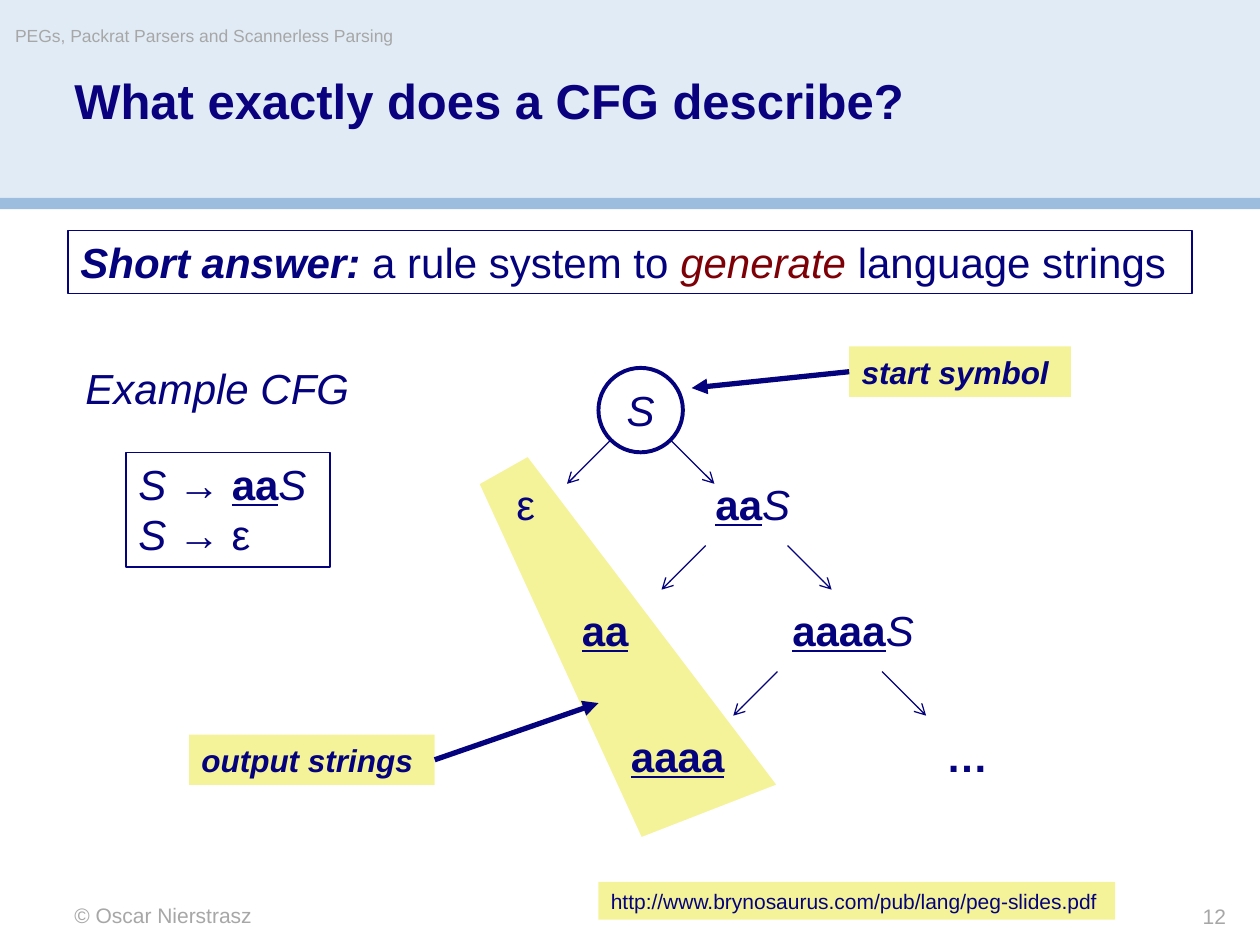
from typing import NamedTuple

import pptx
import pptx.dml.color
import pptx.enum.shapes
import pptx.enum.text
import pptx.oxml
import pptx.oxml.ns
import pptx.util

Inches, Pt = pptx.util.Inches, pptx.util.Pt
Shape = pptx.enum.shapes.MSO_SHAPE
Anchor = pptx.enum.text.MSO_ANCHOR
Align = pptx.enum.text.PP_ALIGN

NAVY, RED, GREY, YELLOW = "05027D", "7E0007", "A7A7A7", "F5F399"


class Run(NamedTuple):
    text: str
    style: str = ""  # any of b, i, u
    ink: str = ""


class Box(NamedTuple):
    """Rectangle of text; each line is a list of runs."""
    at: tuple[float, float, float, float]
    lines: list[list[Run]]
    size: float = 24
    ink: str = NAVY
    fill: str = ""
    edge: str = ""
    inset: bool = True
    align: Align = Align.LEFT


class Arrow(NamedTuple):
    start: tuple[float, float]
    end: tuple[float, float]
    width: float = 0.75
    head: str = "arrow"


def color(code: str) -> pptx.dml.color.RGBColor:
    return pptx.dml.color.RGBColor.from_string(code)


def paint(shape, fill: str = "", edge: str = "", width: float = 0.75) -> None:
    shape.shadow.inherit = False
    if fill:
        shape.fill.solid()
        shape.fill.fore_color.rgb = color(fill)
    else:
        shape.fill.background()
    if edge:
        shape.line.color.rgb = color(edge)
        shape.line.width = Pt(width)
    else:
        shape.line.fill.background()


def write(frame, lines: list[list[Run]], size: float, ink: str, align: Align) -> None:
    for n, runs in enumerate(lines):
        par = frame.paragraphs[0] if n == 0 else frame.add_paragraph()
        par.alignment = align
        font = par.font
        font.name, font.size = "Arial", Pt(size)
        font.color.rgb = color(ink)
        for item in runs:
            run = par.add_run()
            run.text = item.text
            if "b" in item.style:
                run.font.bold = True
            if "i" in item.style:
                run.font.italic = True
            if "u" in item.style:
                run.font.underline = True
            if item.ink:
                run.font.color.rgb = color(item.ink)


def clear(frame) -> None:
    frame.margin_left = frame.margin_right = 0
    frame.margin_top = frame.margin_bottom = 0


def add_box(shapes, box: Box):
    place = [Inches(v) for v in box.at]
    if box.fill or box.edge:
        shape = shapes.add_shape(Shape.RECTANGLE, *place)
        paint(shape, box.fill, box.edge)
    else:
        shape = shapes.add_textbox(*place)
    frame = shape.text_frame
    frame.word_wrap = not box.inset
    frame.vertical_anchor = Anchor.TOP
    if not box.inset:
        clear(frame)
    write(frame, box.lines, box.size, box.ink, box.align)
    return shape


def add_arrow(shapes, arrow: Arrow):
    ends = [Inches(v) for v in arrow.start + arrow.end]
    line = shapes.add_connector(pptx.enum.shapes.MSO_CONNECTOR.STRAIGHT, *ends)
    line.line.color.rgb = color(NAVY)
    line.line.width = Pt(arrow.width)
    tail = pptx.oxml.ns.qn("a:tailEnd")
    line.line._get_or_add_ln().makeelement(tail)
    pptx.oxml.parse_xml  # keeps the oxml parser in use for custom elements
    ln = line.line._get_or_add_ln()
    ln.append(ln.makeelement(tail, {"type": arrow.head}))
    props = line._element.spPr
    props.append(props.makeelement(pptx.oxml.ns.qn("a:effectLst")))
    return line


def add_band(shapes, top: float, height: float, fill: str) -> None:
    band = shapes.add_shape(Shape.RECTANGLE, 0, Inches(top), Inches(10), Inches(height))
    paint(band, fill)


def add_title(shapes, text: str) -> None:
    title = shapes.title
    title.left, title.top = Inches(0.59), Inches(0.61)
    title.width, title.height = Inches(8.83), Inches(0.89)
    frame = title.text_frame
    clear(frame)
    frame.vertical_anchor = Anchor.TOP
    write(frame, [[Run(text, "b")]], 28, "0A017F", Align.LEFT)
    frame.paragraphs[0].line_spacing = 0.9


def add_wedge(shapes) -> None:
    """Highlight behind the output strings."""
    points = [(4.19, 3.62), (3.8, 3.84), (5.09, 6.65)]
    build = shapes.build_freeform(Inches(6.17), Inches(6.23))
    build.add_line_segments([(Inches(x), Inches(y)) for x, y in points])
    paint(build.convert_to_shape(), YELLOW, "FFFFFF")


def add_root(shapes) -> None:
    root = shapes.add_shape(Shape.OVAL, Inches(4.75), Inches(2.92), Inches(0.67), Inches(0.67))
    paint(root, "FFFFFF", NAVY, 2.25)
    root.text_frame.vertical_anchor = Anchor.MIDDLE
    write(root.text_frame, [[Run("S", "i")]], 24, NAVY, Align.CENTER)


MARGIN = [
    Box((0.59, 7.16, 4.17, 0.2), [[Run("© Oscar Nierstrasz")]], 12, GREY, inset=False),
    Box((0.12, 0.2, 5.9, 0.28), [[Run("PEGs, Packrat Parsers and Scannerless Parsing")]],
        10, GREY, inset=False),
    Box((8.25, 7.17, 1.48, 0.2), [[Run("12")]], 12, GREY, inset=False, align=Align.RIGHT),
    Box((4.75, 7, 4.1, 0.3), [[Run("http://www.brynosaurus.com/pub/lang/peg-slides.pdf")]],
        12, fill=YELLOW),
]
RULES = [
    Box((0.54, 1.83, 8.92, 0.5),
        [[Run("Short answer: ", "bi"), Run("a rule system to "),
          Run("generate ", "i", RED), Run("language strings")]], edge=NAVY),
    Box((0.58, 2.83, 2.39, 0.51), [[Run("Example CFG", "i")]]),
    Box((1, 3.59, 1.62, 0.91),
        [[Run("S ", "i"), Run("→ "), Run("aa", "bu"), Run("S", "i")],
         [Run("S ", "i"), Run("→ ε")]], edge=NAVY),
]
TREE = [
    Box((4, 3.75, 0.44, 0.5), [[Run("ε")]]),
    Box((5.58, 3.75, 0.85, 0.5), [[Run("aa", "bu"), Run("S", "i")]]),
    Box((4.52, 4.75, 0.63, 0.5), [[Run("aa", "bu")]]),
    Box((6.19, 4.75, 1.23, 0.5), [[Run("aaaa", "bu"), Run("S", "i")]]),
    Box((4.91, 5.75, 1, 0.5), [[Run("aaaa", "bu")]]),
    Box((7.41, 5.75, 0.59, 0.5), [[Run("…", "b")]]),
]
FORKS = [(4.85, 5.32, 3.49), (5.6, 6.25, 4.33), (6.17, 7, 5.33)]  # left, right, top
STEP = 0.35
START = Box((6.74, 2.75, 1.76, 0.4), [[Run("start symbol", "bi")]], 18, fill=YELLOW)
OUTPUT = Box((1.5, 5.83, 1.95, 0.4), [[Run("output strings", "bi")]], 18, fill=YELLOW)
NOTES = [
    (START, Arrow((6.74, 2.95), (5.49, 3.08), 3, "triangle"), 1),
    (OUTPUT, Arrow((3.45, 6.03), (4.75, 5.58), 3, "triangle"), 3),
]


def main() -> None:
    deck = pptx.Presentation()
    deck.slide_width, deck.slide_height = Inches(10), Inches(7.5)
    shapes = deck.slides.add_slide(deck.slide_layouts[5]).shapes
    add_band(shapes, 0, 1.58, "E1EBF5")
    add_band(shapes, 1.57, 0.09, "9CBDDE")
    add_wedge(shapes)
    add_title(shapes, "What exactly does a CFG describe?")
    shapes._spTree.append(shapes.title._element)  # bring the title above the bands
    add_root(shapes)
    for box in MARGIN + RULES + TREE:
        add_box(shapes, box)
    for left, right, top in FORKS:
        add_arrow(shapes, Arrow((left, top), (left - STEP, top + STEP)))
        add_arrow(shapes, Arrow((right, top), (right + STEP, top + STEP)))
    for box, arrow, side in NOTES:
        label = add_box(shapes, box)
        add_arrow(shapes, arrow).begin_connect(label, side)
    deck.save("out.pptx")


if __name__ == "__main__":
    main()
